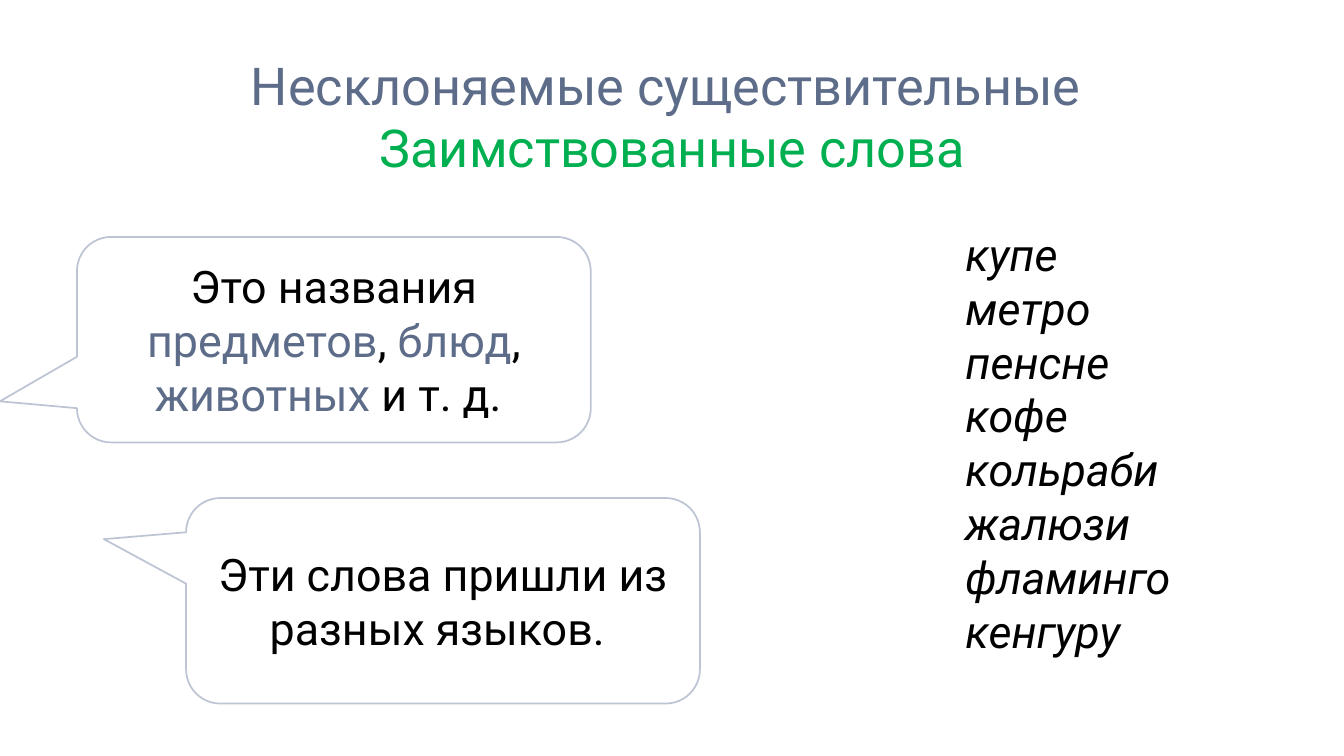
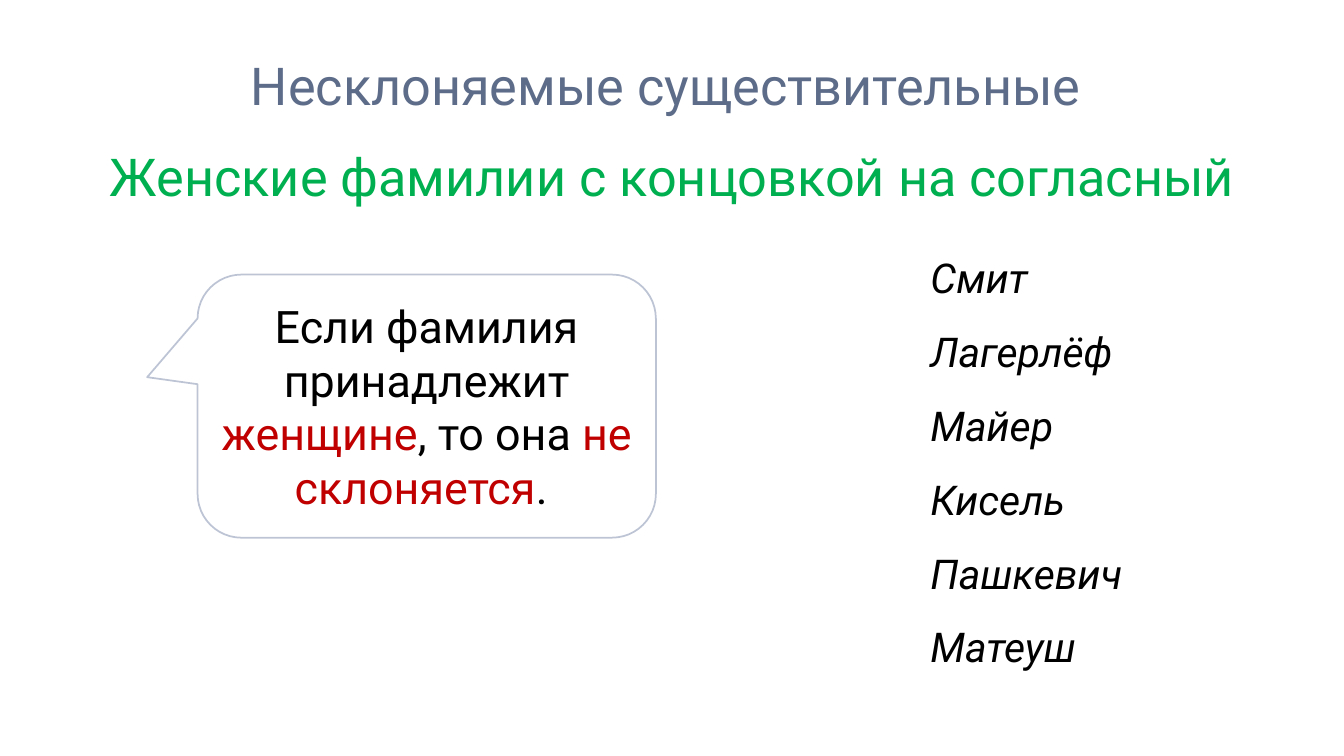
import dataclasses

import lxml.etree
import pptx
import pptx.dml.color
import pptx.enum.shapes
import pptx.enum.text
import pptx.oxml.ns
import pptx.util

Cm = pptx.util.Cm
Pt = pptx.util.Pt
Align = pptx.enum.text.PP_ALIGN
qn = pptx.oxml.ns.qn


@dataclasses.dataclass(frozen=True)
class Theme:
    font: str = "Roboto"
    black: str = "000000"
    white: str = "FFFFFF"
    slate: str = "5D6C89"
    green: str = "00B050"
    red: str = "C00000"
    navy: str = "002060"
    head: float = 37.3
    body: float = 32
    names: float = 29.3
    edge: float = 1.25
    alpha: int = 25


THEME = Theme()
HEAD_BOX = (1.48, 1.02, 30.94, 2.24)
WIDE = (0.33, 0.17)
SLIM = (0.25, 0.13)


def tint(code):
    return pptx.dml.color.RGBColor.from_string(code)


def place(shape, box):
    shape.left, shape.top, shape.width, shape.height = map(Cm, box)


def set_frame(frame, inset=WIDE):
    side, edge = inset
    frame.word_wrap = True
    frame.auto_size = pptx.enum.text.MSO_AUTO_SIZE.NONE
    frame.vertical_anchor = pptx.enum.text.MSO_ANCHOR.MIDDLE
    frame.margin_left = frame.margin_right = Cm(side)
    frame.margin_top = frame.margin_bottom = Cm(edge)


def style(run, size, color, slant=False):
    font = run.font
    font.name, font.size, font.italic = THEME.font, Pt(size), slant
    font.color.rgb = tint(color)


def add_head(slide, title, topic, drop):
    """Place the title and, drop cm below its top, the topic line."""
    left, top, width, height = HEAD_BOX
    place(slide.shapes.title, HEAD_BOX)
    low = slide.shapes.add_textbox(Cm(left), Cm(top + drop), Cm(width), Cm(height))
    lines = ((slide.shapes.title, title, THEME.slate), (low, topic, THEME.green))
    for shape, text, color in lines:
        set_frame(shape.text_frame)
        shape.text_frame.text = text
        para = shape.text_frame.paragraphs[0]
        para.alignment = Align.CENTER
        style(para.runs[0], THEME.head, color)


def add_list(slide, box, words, size, pitch=1.0, inset=WIDE, form="rect"):
    """Fill the body placeholder, outlined as the preset form, with italic lines."""
    body = slide.placeholders[1]
    place(body, box)
    shell = lxml.etree.SubElement(body._element.spPr, qn("a:prstGeom"), prst=form)
    lxml.etree.SubElement(shell, qn("a:avLst"))
    frame = body.text_frame
    set_frame(frame, inset)
    frame.text = "\n".join(words)
    for para in frame.paragraphs:
        props = para._p.get_or_add_pPr()
        props.set("marL", "0")
        props.set("indent", "0")
        lxml.etree.SubElement(props, qn("a:buNone"))
        para.alignment = Align.LEFT
        para.line_spacing = pitch
        para.space_before = para.space_after = Pt(0)
        style(para.runs[0], size, THEME.black, slant=True)


def add_bubble(slide, box, tip, parts):
    """Draw a callout; tip is the pointer's offset as a share of the box."""
    kind = pptx.enum.shapes.MSO_SHAPE.ROUNDED_RECTANGULAR_CALLOUT
    shape = slide.shapes.add_shape(kind, *map(Cm, box))
    shape.adjustments[0], shape.adjustments[1] = tip
    shape.shadow.inherit = False
    shape.fill.solid()
    shape.fill.fore_color.rgb = tint(THEME.white)
    shape.line.width = Pt(THEME.edge)
    shape.line.color.rgb = tint(THEME.navy)
    color = shape.line._ln.find(".//" + qn("a:srgbClr"))
    lxml.etree.SubElement(color, qn("a:alpha"), val=str(THEME.alpha * 1000))
    set_frame(shape.text_frame, SLIM)
    para = shape.text_frame.paragraphs[0]
    para.alignment = Align.CENTER
    for text, shade in parts:
        run = para.add_run()
        run.text = text
        style(run, THEME.body, shade)


def add_slide(deck, topic, drop, bubbles, words):
    slide = deck.slides.add_slide(deck.slide_layouts[1])
    add_head(slide, "Несклоняемые существительные ", topic, drop)
    add_list(slide, **words)
    for bubble in bubbles:
        add_bubble(slide, *bubble)


def main():
    deck = pptx.Presentation()
    deck.slide_width, deck.slide_height = Cm(33.87), Cm(19.05)
    black, slate, red = THEME.black, THEME.slate, THEME.red

    add_slide(
        deck, "Заимствованные слова", 1.56,
        [
            ((1.94, 5.97, 12.95, 5.18), (-0.65, 0.3), [
                ("Это названия ", black), ("предметов", slate), (", ", black),
                ("блюд", slate), (", ", black), ("животных", slate),
                (" и т. д. ", black)]),
            ((4.69, 12.55, 12.95, 5.18), (-0.66, -0.3), [
                ("Эти слова пришли из разных языков. ", black)]),
        ],
        dict(box=(24, 5.42, 9.87, 11.43), size=THEME.body,
             words=["купе", "метро", "пенсне", "кофе", "кольраби", "жалюзи",
                    "фламинго", "кенгуру"]),
    )
    add_slide(
        deck, "Женские фамилии с концовкой на согласный", 2.28,
        [
            ((4.98, 6.92, 11.55, 6.63), (-0.61, -0.11), [
                ("Если фамилия принадлежит ", black), ("женщине", red),
                (", то она ", black), ("не склоняется", red), (". ", black)]),
        ],
        dict(box=(22.81, 5.97, 7.95, 10.72), size=THEME.names, pitch=1.5,
             inset=SLIM, form="roundRect",
             words=["Смит", "Лагерлёф", "Майер", "Кисель", "Пашкевич",
                    "Матеуш"]),
    )
    deck.save("out.pptx")


if __name__ == "__main__":
    main()
